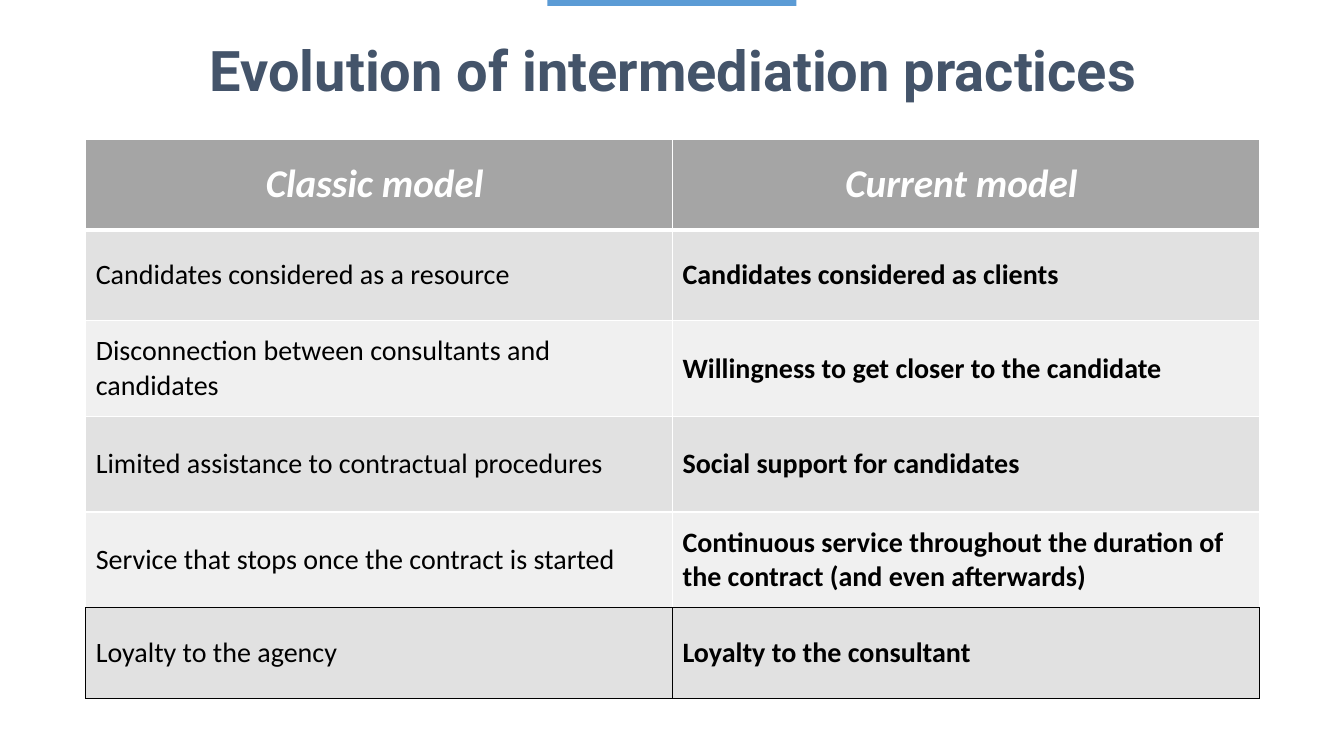
from dataclasses import dataclass

from pptx import Presentation
from pptx.dml.color import RGBColor
from pptx.enum.shapes import MSO_SHAPE
from pptx.enum.text import MSO_ANCHOR, MSO_AUTO_SIZE, PP_ALIGN
from pptx.oxml.ns import qn
from pptx.util import Inches, Pt
from lxml.etree import SubElement


@dataclass(frozen=True)
class Theme:
    accent: str = "5B9BD5"
    title: str = "44546A"
    head: str = "A5A5A5"
    bands: tuple = ("E1E1E1", "F0F0F0")
    white: str = "FFFFFF"
    black: str = "000000"
    title_font: str = "Roboto"
    body_font: str = "Calibri"
    title_size: int = 40
    head_size: int = 28
    body_size: int = 20


THEME = Theme()
HEADS = ("Classic model ", "Current model ")
PAIRS = (
    ("Candidates considered as a resource", "Candidates considered as clients"),
    ("Disconnection between consultants and candidates",
     "Willingness to get closer to the candidate"),
    ("Limited assistance to contractual procedures", "Social support for candidates"),
    ("Service that stops once the contract is started",
     "Continuous service throughout the duration of the contract (and even afterwards)"),
    ("Loyalty to the agency", "Loyalty to the consultant"),
)
HEIGHTS = (0.9, 0.9, 0.95, 0.95, 0.95, 0.9)


def style(frame, font, size, color, bold, italic=False, align=PP_ALIGN.LEFT):
    for para in frame.paragraphs:
        para.alignment = align
        for run in para.runs:
            run.font.name = font
            run.font.size = Pt(size)
            run.font.bold = bold
            run.font.italic = italic
            run.font.color.rgb = RGBColor.from_string(color)


def add_bar(slide):
    bar = slide.shapes.add_shape(
        MSO_SHAPE.RECTANGLE, Inches(5.43), 0, Inches(2.47), Inches(0.06))
    bar.shadow.inherit = False
    bar.fill.solid()
    bar.fill.fore_color.rgb = RGBColor.from_string(THEME.accent)
    bar.line.fill.background()


def add_title(slide, text):
    title = slide.shapes.title
    title.left, title.top = Inches(0.88), Inches(0.26)
    title.width, title.height = Inches(11.59), Inches(0.86)
    frame = title.text_frame
    frame.text = text
    frame.auto_size = MSO_AUTO_SIZE.NONE
    frame.vertical_anchor = MSO_ANCHOR.MIDDLE
    style(frame, THEME.title_font, THEME.title_size, THEME.title, True,
          align=PP_ALIGN.CENTER)


def set_edges(cell, edges):
    """Draw cell borders; edges maps L, R, T, B to (colour, points)."""
    props = cell._tc.get_or_add_tcPr()
    for index, side in enumerate("LRTB"):
        color, width = edges[side]
        line = SubElement(props, qn(f"a:ln{side}"), w=str(Pt(width)))
        fill = SubElement(line, qn("a:solidFill"))
        SubElement(fill, qn("a:srgbClr"), val=color)
        props.insert(index, line)


def row_edges(row, last):
    """White rules, a thick one below the head, and a black box on the last row."""
    edges = dict.fromkeys("LRTB", (THEME.black if row == last else THEME.white, 1))
    if row == 0:
        edges["B"] = (THEME.white, 3)
    elif row == 1:
        edges["T"] = (THEME.white, 3)
    elif row == last - 1:
        edges["B"] = (THEME.black, 1)
    return edges


def fill_cell(cell, text, row, col):
    cell.text_frame.text = text
    cell.vertical_anchor = MSO_ANCHOR.MIDDLE
    cell.fill.solid()
    if row == 0:
        shade = THEME.head
        style(cell.text_frame, THEME.body_font, THEME.head_size, THEME.white,
              True, True, PP_ALIGN.CENTER)
    else:
        shade = THEME.bands[(row - 1) % 2]
        style(cell.text_frame, THEME.body_font, THEME.body_size, THEME.black, col == 1)
    cell.fill.fore_color.rgb = RGBColor.from_string(shade)


def add_grid(slide, rows):
    table = slide.shapes.add_table(
        len(rows), 2, Inches(0.85), Inches(1.38),
        Inches(11.64), Inches(sum(HEIGHTS))).table
    for row, texts in enumerate(rows):
        table.rows[row].height = Inches(HEIGHTS[row])
        for col, text in enumerate(texts):
            cell = table.cell(row, col)
            fill_cell(cell, text, row, col)
            set_edges(cell, row_edges(row, len(rows) - 1))


def main():
    deck = Presentation()
    deck.slide_width, deck.slide_height = Inches(13.33), Inches(7.5)
    slide = deck.slides.add_slide(deck.slide_layouts.get_by_name("Title Only"))
    add_bar(slide)
    add_title(slide, "Evolution of intermediation practices")
    add_grid(slide, (HEADS, *PAIRS))
    deck.save("out.pptx")


if __name__ == "__main__":
    main()
